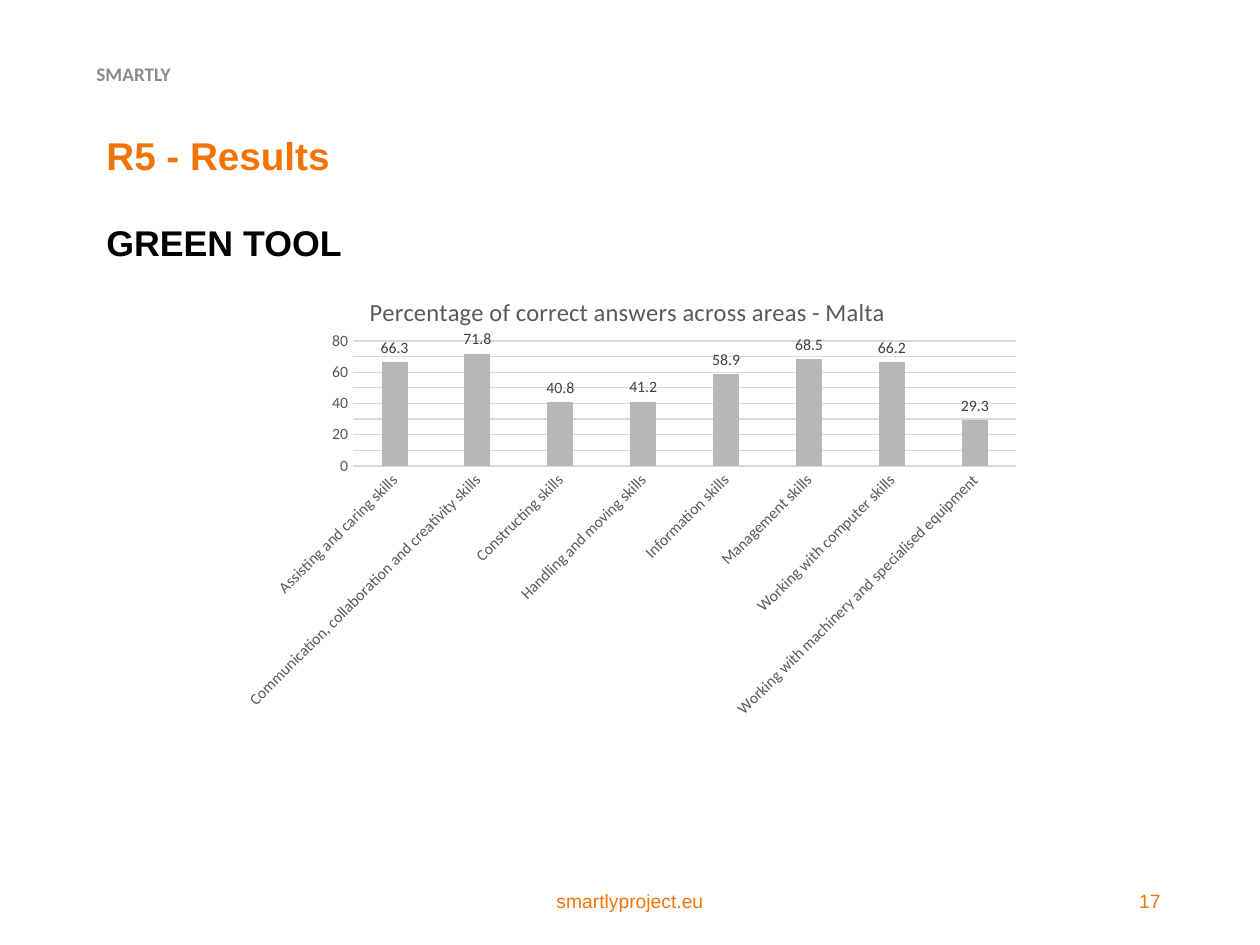
from dataclasses import dataclass

import pptx
import pptx.chart.data
import pptx.dml.color
import pptx.enum.chart
import pptx.enum.text
import pptx.oxml.ns
import pptx.util
from lxml import etree

PX = 914400 / 126  # EMU in one px
ALIGN = pptx.enum.text.PP_ALIGN
ANCHOR = pptx.enum.text.MSO_ANCHOR
RGB = pptx.dml.color.RGBColor

ORANGE = RGB(0xF3, 0x74, 0x06)
BLACK = RGB(0x00, 0x00, 0x00)
HEADER_GRAY = RGB(0x8C, 0x8C, 0x8C)
AXIS_GRAY = RGB(0x59, 0x59, 0x59)
LABEL_GRAY = RGB(0x40, 0x40, 0x40)
GRID_GRAY = RGB(0xD9, 0xD9, 0xD9)
BAR_GRAY = RGB(0xB7, 0xB7, 0xB7)


@dataclass(frozen=True)
class Box:
    left: int
    top: int
    width: int
    height: int

    def emu(self) -> list[int]:
        return [round(n * PX) for n in (self.left, self.top, self.width, self.height)]


@dataclass(frozen=True)
class Line:
    text: str
    size: float
    color: RGB
    font: str = "Arial"
    bold: bool = False
    align: ALIGN = ALIGN.LEFT
    spacing: float = 1.0
    before: int = 0


def set_font(font, name: str, size: float, color: RGB, bold: bool = False) -> None:
    font.name = name
    font.size = pptx.util.Pt(size)
    font.bold = bold
    font.color.rgb = color


def add_text(slide, box: Box, lines: list[Line], anchor=ANCHOR.MIDDLE) -> None:
    frame = slide.shapes.add_textbox(*box.emu()).text_frame
    frame.word_wrap = True
    frame.vertical_anchor = anchor
    frame.margin_top = frame.margin_bottom = 0
    for index, line in enumerate(lines):
        paragraph = frame.add_paragraph() if index else frame.paragraphs[0]
        paragraph.text = line.text
        paragraph.alignment = line.align
        paragraph.line_spacing = line.spacing
        if line.before:
            paragraph.space_before = pptx.util.Pt(line.before)
        set_font(paragraph.font, line.font, line.size, line.color, line.bold)


def place(parent, position: int, **values: str | float) -> None:
    """Give a chart part a manual layout."""
    tag = pptx.oxml.ns.qn
    layout = parent.find(tag("c:layout"))
    if layout is None:
        layout = etree.Element(tag("c:layout"))
        parent.insert(position, layout)
    manual = etree.SubElement(layout, tag("c:manualLayout"))
    for name, value in values.items():
        etree.SubElement(manual, tag(f"c:{name}")).set("val", str(value))


def add_skills_chart(slide, box: Box, title: str, scores: dict[str, float]) -> None:
    data = pptx.chart.data.CategoryChartData()
    data.categories = list(scores)
    data.add_series("Series 1", list(scores.values()))
    chart = slide.shapes.add_chart(
        pptx.enum.chart.XL_CHART_TYPE.COLUMN_CLUSTERED, *box.emu(), data
    ).chart
    set_font(chart.font, "Calibri", 10, BLACK)
    chart.has_legend = False

    # Title
    chart.has_title = True
    chart.chart_title.include_in_layout = False
    paragraph = chart.chart_title.text_frame.paragraphs[0]
    paragraph.text = title
    set_font(paragraph.font, "Calibri", 14, AXIS_GRAY)
    place(chart.chart_title._element, 1, xMode="edge", yMode="edge", x=0.17, y=0.04)

    # Axes and gridlines
    for axis in (chart.category_axis, chart.value_axis):
        axis.major_tick_mark = pptx.enum.chart.XL_TICK_MARK.NONE
        set_font(axis.tick_labels.font, "Calibri", 9, AXIS_GRAY)
    properties = chart.category_axis._element.find(pptx.oxml.ns.qn("c:txPr"))
    properties.find(pptx.oxml.ns.qn("a:bodyPr")).set("rot", "-2700000")
    chart.value_axis.minimum_scale = 0
    chart.value_axis.maximum_scale = 80
    chart.value_axis.major_unit = 10
    chart.value_axis.format.line.fill.background()
    for line in (chart.category_axis.format.line,
                 chart.value_axis.major_gridlines.format.line):
        line.color.rgb = GRID_GRAY
        line.width = pptx.util.Pt(0.75)

    # Bars and their labels
    plot = chart.plots[0]
    plot.vary_by_categories = False
    plot.gap_width = 219
    plot.overlap = -27
    series = plot.series[0]
    series.format.fill.solid()
    series.format.fill.fore_color.rgb = BAR_GRAY
    labels = series.data_labels
    labels.show_value = True
    labels.position = pptx.enum.chart.XL_LABEL_POSITION.OUTSIDE_END
    set_font(labels.font, "Calibri", 9, LABEL_GRAY)
    plot_area = chart._chartSpace.chart.plotArea
    place(plot_area, 0, layoutTarget="inner", xMode="edge", yMode="edge",
          x=0.155, y=0.151, w=0.828, h=0.278)


SCORES = {
    "Assisting and caring skills": 66.3,
    "Communication, collaboration and creativity skills": 71.8,
    "Constructing skills": 40.8,
    "Handling and moving skills": 41.2,
    "Information skills": 58.9,
    "Management skills": 68.5,
    "Working with computer skills": 66.2,
    "Working with machinery and specialised equipment": 29.3,
}


def main() -> None:
    presentation = pptx.Presentation()
    presentation.slide_width = round(1260 * PX)
    presentation.slide_height = round(945 * PX)
    slide = presentation.slides.add_slide(presentation.slide_layouts[6])

    # Header and headings
    add_text(slide, Box(84, 49, 284, 50),
             [Line("SMARTLY", 11, HEADER_GRAY, "Calibri", bold=True)])
    add_text(slide, Box(94, 144, 1071, 130), [
        Line("R5 - Results", 22.1, ORANGE, bold=True, spacing=0.7),
        Line("GREEN TOOL", 20.4, BLACK, bold=True, spacing=0.7, before=32),
    ], ANCHOR.TOP)

    # Chart
    add_skills_chart(slide, Box(229, 273, 801, 450),
                     "Percentage of correct answers across areas - Malta", SCORES)

    # Footer
    add_text(slide, Box(417, 876, 426, 50),
             [Line("smartlyproject.eu", 11, ORANGE, align=ALIGN.CENTER)])
    add_text(slide, Box(890, 876, 283, 50),
             [Line("17", 11, ORANGE, align=ALIGN.RIGHT)])

    presentation.save("out.pptx")


if __name__ == "__main__":
    main()
